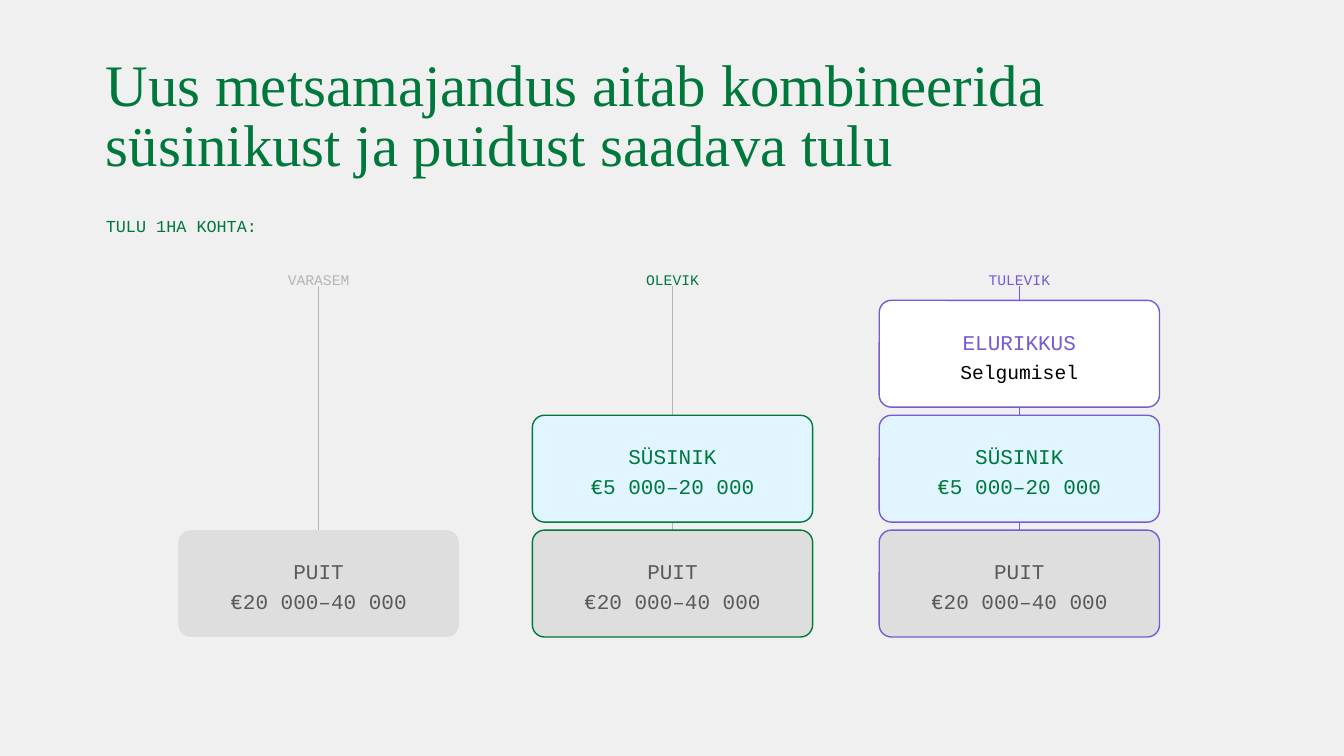
from lxml.etree import SubElement
from pptx import Presentation
from pptx.dml.color import RGBColor
from pptx.enum.shapes import MSO_CONNECTOR, MSO_SHAPE
from pptx.enum.text import MSO_ANCHOR, PP_ALIGN
from pptx.oxml.ns import qn
from pptx.util import Inches, Pt

COLORS = {
    "background": "F0F0F0", "green": "00783C", "violet": "785AD2",
    "silver": "B5B5B5", "timber": "DEDEDE", "timber_text": "5A5A5A",
    "carbon": "E0F5FF", "white": "FFFFFF", "black": "000000",
}
MONO, SERIF = "Courier New", "Times New Roman"

CARD_WIDTH, CARD_HEIGHT, CARD_STEP = 2.78, 1.06, 1.14
COLUMN_TOP, COLUMN_BOTTOM = 2.65, 6.32
STEM_OFFSET = 0.19

# Each income: fill, then lines of (text, size, colour)
TIMBER = ("timber", [("PUIT", 15, "timber_text"), ("€20 000–40 000", 15, "timber_text")])
CARBON = ("carbon", [("SÜSINIK", 15, "green"), ("€5 000–20 000", 15, "green")])
NATURE = ("white", [("ELURIKKUS", 15, "violet"), ("Selgumisel", 14, "black")])

# Each period: left, name, name colour, stem colour, card outline, incomes from the bottom up
PERIODS = [
    (1.77, "VARASEM", "silver", "silver", None, [TIMBER]),
    (5.28, "OLEVIK", "green", "silver", "green", [TIMBER, CARBON]),
    (8.72, "TULEVIK", "violet", "violet", "violet", [TIMBER, CARBON, NATURE]),
]


def rgb(name):
    return RGBColor.from_string(COLORS[name])


def write(shape, lines, font=MONO, align=PP_ALIGN.LEFT, spacing=1.2, anchor=MSO_ANCHOR.TOP):
    """Fill a shape with lines of (text, size, colour), without inner margins."""
    frame = shape.text_frame
    frame.word_wrap = True
    frame.vertical_anchor = anchor
    frame.margin_left = frame.margin_right = frame.margin_top = frame.margin_bottom = 0
    for index, (text, size, color) in enumerate(lines):
        paragraph = frame.paragraphs[0] if index == 0 else frame.add_paragraph()
        paragraph.text = text
        paragraph.alignment = align
        paragraph.line_spacing = spacing
        paragraph.font.name = font
        paragraph.font.size = Pt(size)
        paragraph.font.color.rgb = rgb(color)


def add_text(slide, box, line, **style):
    write(slide.shapes.add_textbox(*map(Inches, box)), [line], **style)


def add_stem(slide, x, top, bottom, color):
    stem = slide.shapes.add_connector(
        MSO_CONNECTOR.STRAIGHT, Inches(x), Inches(top), Inches(x), Inches(bottom))
    stem.line.color.rgb = rgb(color)
    stem.line.width = Pt(1)
    SubElement(stem._element.spPr, qn("a:effectLst"))


def add_card(slide, left, top, outline, income):
    fill, lines = income
    card = slide.shapes.add_shape(
        MSO_SHAPE.ROUNDED_RECTANGLE, *map(Inches, (left, top, CARD_WIDTH, CARD_HEIGHT)))
    card.adjustments[0] = 0.114
    card.shadow.inherit = False
    card.fill.solid()
    card.fill.fore_color.rgb = rgb(fill)
    if outline:
        card.line.color.rgb = rgb(outline)
        card.line.width = Pt(1)
    else:
        card.line.fill.background()
    write(card, lines, align=PP_ALIGN.CENTER, anchor=MSO_ANCHOR.MIDDLE)


def add_period(slide, left, top, bottom, name, name_color, stem_color, outline, incomes):
    """Place a period's name, with its incomes stacked up from the bottom."""
    lowest = bottom - CARD_HEIGHT
    add_stem(slide, left + CARD_WIDTH / 2, top + STEM_OFFSET, lowest, stem_color)
    add_text(slide, (left, top, CARD_WIDTH, 0.2), (name, 10.5, name_color),
             align=PP_ALIGN.CENTER)
    for level, income in enumerate(incomes):
        add_card(slide, left, lowest - level * CARD_STEP, outline, income)


def add_heading(slide, left, top, width):
    add_text(slide, (left, top, width, 1.49),
             ("Uus metsamajandus aitab kombineerida süsinikust ja puidust saadava tulu",
              42, "green"), font=SERIF, spacing=0.85)
    add_text(slide, (left, top + 1.52, width / 4, 0.2), ("TULU 1HA KOHTA:", 12, "green"))


def main():
    deck = Presentation()
    deck.slide_width, deck.slide_height = Inches(13.33), Inches(7.5)
    slide = deck.slides.add_slide(deck.slide_layouts[6])
    slide.background.fill.solid()
    slide.background.fill.fore_color.rgb = rgb("background")
    add_heading(slide, 1.05, 0.58, 11.21)
    for left, *period in PERIODS:
        add_period(slide, left, COLUMN_TOP, COLUMN_BOTTOM, *period)
    deck.save("out.pptx")


if __name__ == "__main__":
    main()
